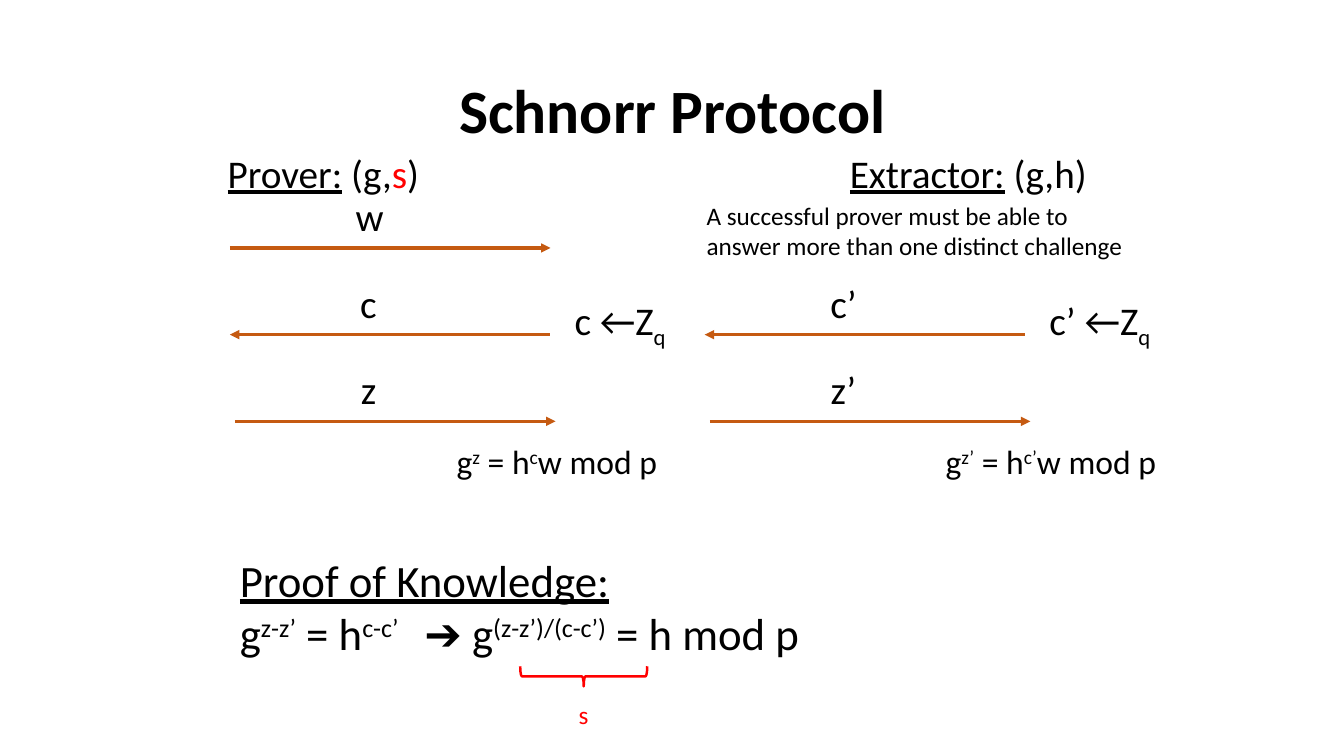
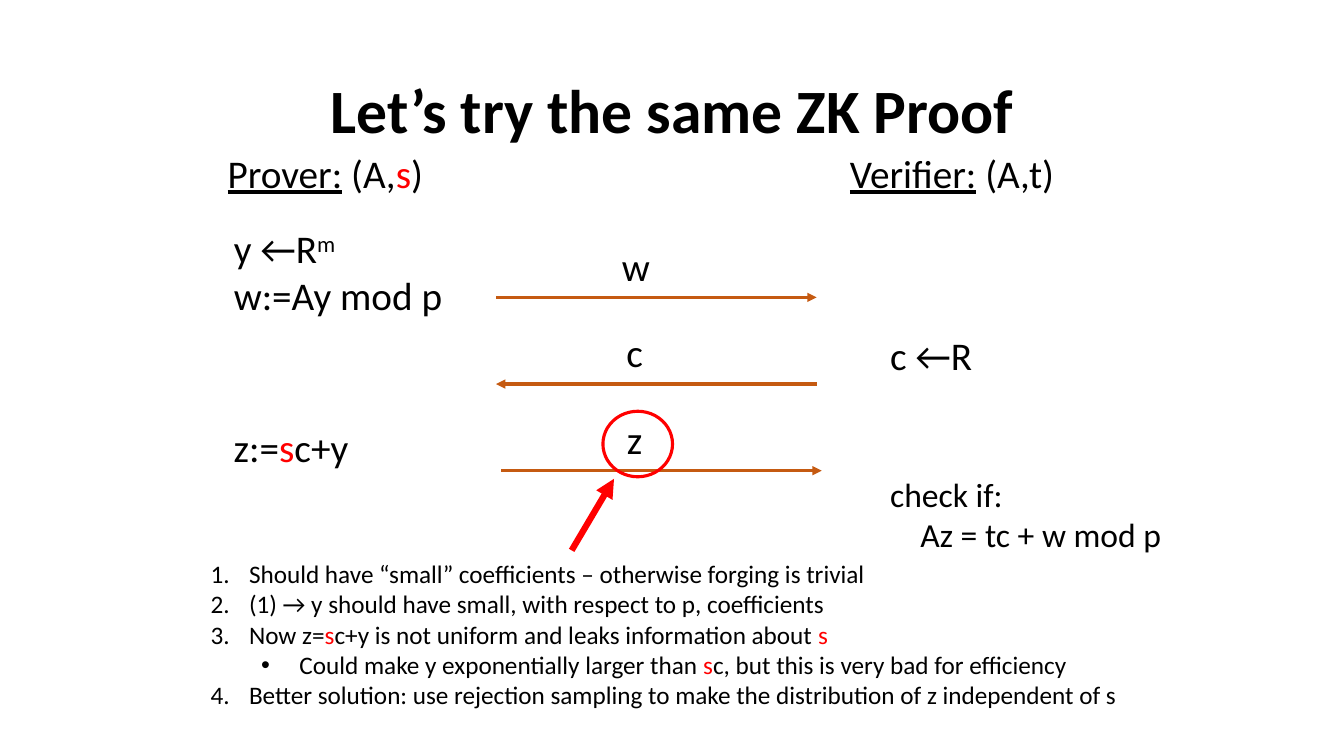
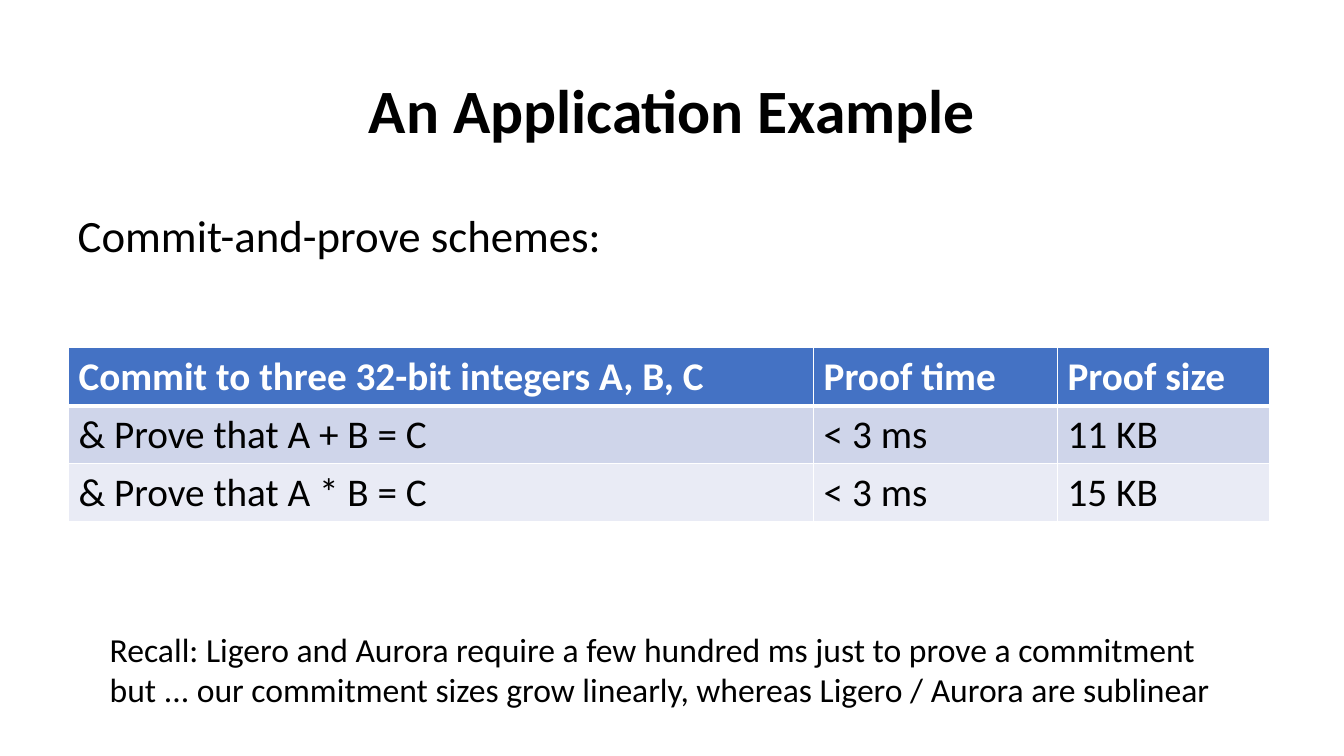
from lxml.etree import SubElement
from pptx import Presentation
from pptx.dml.color import RGBColor
from pptx.enum.shapes import MSO_CONNECTOR, MSO_SHAPE
from pptx.enum.text import MSO_ANCHOR, MSO_AUTO_SIZE, PP_ALIGN
from pptx.oxml.ns import qn
from pptx.util import Pt

PX = 9144
FONT = "Calibri"
COLORS = {
    "text": "000000",
    "secret": "FF0000",
    "arrow": "C55A11",
    "white": "FFFFFF",
    "header": "4472C4",
    "band_dark": "CFD5EA",
    "band_light": "E9EBF5",
}
BASELINES = {"sup": "30000", "sub": "-25000"}
TITLE_BOX = (92, 40, 1150, 145)
TITLE_LAYOUT = 5
CONTENT_LAYOUT = 1
PARTY_TOP = 143
ROW_STEP = 86
ARROW_WIDTH = 318
LABEL_RISE = 60
LINE_HEIGHT = 57
PASSES = (
    {"shift": 0, "label": 115, "width": 49, "align": PP_ALIGN.LEFT, "end": "tailEnd"},
    {"shift": 0, "label": 70, "width": 135, "align": PP_ALIGN.CENTER, "end": "headEnd"},
    {"shift": 5, "label": 61, "width": 153, "align": PP_ALIGN.CENTER, "end": "tailEnd"},
)


def emu(*lengths):
    return [length * PX for length in lengths]


def rgb(name):
    return RGBColor.from_string(COLORS[name])


def set_attributes(target, values):
    for name, value in values.items():
        setattr(target, name, value)


def place(shape, box):
    set_attributes(shape, dict(zip(("left", "top", "width", "height"), emu(*box))))


def add_run(paragraph, text, marks, size, color="text", bold=False):
    run = paragraph.add_run()
    run.text = text
    set_attributes(run.font, {"name": FONT, "size": Pt(size), "bold": bold})
    run.font.color.rgb = rgb("secret" if "secret" in marks else color)
    if "underline" in marks:
        run.font.underline = True
    for mark in marks:
        if mark in BASELINES:
            run.font._element.set("baseline", BASELINES[mark]) if hasattr(run.font, "_element") else (
                run._r.get_or_add_rPr().set("baseline", BASELINES[mark])
            )


def write_text(frame, lines, size, paragraph_format=None, **font_format):
    for index, line in enumerate(lines):
        paragraph = frame.paragraphs[0] if index == 0 else frame.add_paragraph()
        set_attributes(paragraph, paragraph_format or {})
        for text, *marks in [(line,)] if isinstance(line, str) else line:
            add_run(paragraph, text, marks, size, **font_format)
    return frame.paragraphs


def add_text(slide, box, lines, size=28, align=PP_ALIGN.LEFT, **font_format):
    frame = slide.shapes.add_textbox(*emu(*box)).text_frame
    set_attributes(frame, {"word_wrap": True, "auto_size": MSO_AUTO_SIZE.SHAPE_TO_FIT_TEXT})
    return write_text(frame, lines, size, {"alignment": align}, **font_format)


def indent(paragraph, margin, first_line=0):
    properties = paragraph._p.get_or_add_pPr()
    properties.set("marL", str(margin * PX))
    properties.set("indent", str(first_line * PX))
    return properties


def add_titled_slide(presentation, layout, title):
    slide = presentation.slides.add_slide(presentation.slide_layouts[layout])
    place(slide.shapes.title, TITLE_BOX)
    frame = slide.shapes.title.text_frame
    set_attributes(frame, {
        "vertical_anchor": MSO_ANCHOR.MIDDLE, "word_wrap": True, "auto_size": MSO_AUTO_SIZE.NONE,
    })
    write_text(frame, [title], 44, {"alignment": PP_ALIGN.CENTER, "line_spacing": 0.9}, bold=True)
    return slide


def fill_body(slide, box, lines, size, paragraph_format):
    body = slide.placeholders[1]
    place(body, box)
    set_attributes(body.text_frame, {"word_wrap": True, "auto_size": MSO_AUTO_SIZE.NONE})
    return write_text(body.text_frame, lines, size, paragraph_format)


def add_arrow(slide, start, finish, color="arrow", width=2.25, end="tailEnd"):
    connector = slide.shapes.add_connector(MSO_CONNECTOR.STRAIGHT, *emu(*start, *finish))
    connector.line.color.rgb = rgb(color)
    connector.line.width = Pt(width)
    properties = connector._element.spPr
    SubElement(properties.find(qn("a:ln")), qn(f"a:{end}")).set("type", "triangle")
    SubElement(properties, qn("a:effectLst"))


def add_outline(slide, preset, box, width):
    shape = slide.shapes.add_shape(preset, *emu(*box))
    shape.shadow.inherit = False
    shape.fill.background()
    shape.line.color.rgb = rgb("secret")
    shape.line.width = Pt(width)
    return shape


def add_party(slide, left, width, role, *keys):
    add_text(slide, (left, PARTY_TOP, width, LINE_HEIGHT), [[(role, "underline"), *keys]])


def add_exchange(slide, left, top, messages):
    for row, (message, step) in enumerate(zip(messages, PASSES)):
        if not message:
            continue
        y = top + row * ROW_STEP
        start = left + step["shift"]
        add_arrow(slide, (start, y), (start + ARROW_WIDTH, y), end=step["end"])
        label_box = (left + step["label"], y - LABEL_RISE, step["width"], LINE_HEIGHT)
        add_text(slide, label_box, [message], align=step["align"])


def add_transcript(slide, left, top, commitment, prime, check_left, check_width):
    challenge, response = f"c{prime}", f"z{prime}"
    add_exchange(slide, left, top, (commitment, challenge, response))
    add_text(slide, (left + 332, top + 43, 135, LINE_HEIGHT), [[(f"{challenge} ←Z",), ("q", "sub")]])
    equation = [("g",), (response, "sup"), (" = h",), (challenge, "sup"), ("w mod p",)]
    add_text(slide, (left + check_left, top + 187, check_width, 50), [equation], 24)


def add_knowledge_proof(slide, left, top):
    equation = [
        ("g",), ("z-z’", "sup"), (" = h",), ("c-c’", "sup"), ("\t➔ g",),
        ("(z-z’)/(c-c’)", "sup"), (" = h mod p",),
    ]
    lines = [[("Proof of Knowledge:", "underline")], equation]
    paragraphs = add_text(slide, (left, top, 835, 118), lines, 32)
    tabs = SubElement(paragraphs[1]._p.get_or_add_pPr(), qn("a:tabLst"))
    tab = SubElement(tabs, qn("a:tab"))
    tab.set("pos", str(183 * PX))
    tab.set("algn", "l")
    brace = add_outline(slide, MSO_SHAPE.LEFT_BRACE, (left + 341, top + 65, 20, 126), 1.75)
    brace.rotation = 270
    add_text(slide, (left + 336, top + 146, 39, 40), ["s"], 18, color="secret")


def add_remarks(slide, box):
    remarks = [
        "Should have “small” coefficients – otherwise forging is trivial",
        "(1) → y should have small, with respect to p, coefficients",
        [("Now z=",), ("s", "secret"), ("c+y is not uniform and leaks information about ",), ("s", "secret")],
        [("Could make y exponentially larger than ",), ("s", "secret"),
         ("c, but this is very bad for efficiency",)],
        "Better solution: use rejection sampling to make the distribution of z independent of s",
    ]
    spacing = {"space_before": Pt(0), "line_spacing": 1.0}
    for index, paragraph in enumerate(fill_body(slide, box, remarks, 18, spacing)):
        if index == 3:
            paragraph.level = 1
            properties = indent(paragraph, 88, -38)
            SubElement(properties, qn("a:buFont")).set("typeface", "Arial")
            SubElement(properties, qn("a:buChar")).set("char", "•")
        else:
            properties = indent(paragraph, 38, -38)
            SubElement(properties, qn("a:buFont")).set("typeface", "+mj-lt")
            SubElement(properties, qn("a:buAutoNum")).set("type", "arabicPeriod")


def format_cell(cell, text, fill, edges, **font_format):
    properties = cell._tc.get_or_add_tcPr()
    for side, width in edges.items():
        line = SubElement(properties, qn(f"a:ln{side}"))
        line.set("w", str(Pt(width)))
        color = SubElement(SubElement(line, qn("a:solidFill")), qn("a:srgbClr"))
        color.set("val", COLORS["white"])
    cell.fill.solid()
    cell.fill.fore_color.rgb = rgb(fill)
    write_text(cell.text_frame, [text], 28, **font_format)


def add_cost_table(slide, left, top):
    rows = (
        ("Commit to three 32-bit integers A, B, C", "Proof time", "Proof size"),
        ("& Prove that A + B = C", "< 3 ms", "11 KB"),
        ("& Prove that A * B = C", "< 3 ms", "15 KB"),
    )
    widths = (739, 242, 210)
    box = emu(left, top, sum(widths), LINE_HEIGHT * len(rows))
    table = slide.shapes.add_table(len(rows), len(widths), *box).table
    for column, width in zip(table.columns, widths):
        column.width = width * PX
    fills = ("header", "band_dark", "band_light")
    for row, (texts, fill) in enumerate(zip(rows, fills)):
        edges = {"L": 1, "R": 1, "T": 3 if row == 1 else 1, "B": 3 if row == 0 else 1}
        color = "white" if row == 0 else "text"
        for column, text in enumerate(texts):
            format_cell(table.cell(row, column), text, fill, edges, color=color, bold=row == 0)


def build_extractor_slide(presentation):
    slide = add_titled_slide(presentation, TITLE_LAYOUT, "Schnorr Protocol")
    add_party(slide, 216, 245, "Prover:", (" (g,",), ("s", "secret"), (")",))
    add_party(slide, 833, 265, "Extractor:", (" (g,h)",))
    add_transcript(slide, 228, 246, "w", "", 215, 252)
    add_transcript(slide, 699, 246, None, "’", 229, 292)
    insight = "A successful prover must be able to answer more than one distinct challenge"
    add_text(slide, (691, 194, 437, 71), [insight], 18)
    add_knowledge_proof(slide, 228, 543)


def build_lattice_slide(presentation):
    slide = add_titled_slide(presentation, CONTENT_LAYOUT, "Let’s try the same ZK Proof")
    add_party(slide, 216, 245, "Prover:", (" (A,",), ("s", "secret"), (")",))
    add_party(slide, 833, 245, "Verifier:", (" (A,t)",))
    add_text(slide, (222, 218, 239, 104), [[("y ←R",), ("m", "sup")], "w:=Ay mod p"])
    add_text(slide, (222, 415, 153, LINE_HEIGHT), [[("z:=",), ("s", "secret"), ("c+y",)]])
    add_text(slide, (873, 324, 134, LINE_HEIGHT), ["c ←R"])
    check = add_text(slide, (873, 465, 301, 91), ["check if:", "Az = tc + w mod p"], 24)
    indent(check[1], 30)
    add_exchange(slide, 492, 295, ("w", "c", "z"))
    add_outline(slide, MSO_SHAPE.OVAL, (598, 408, 69, 65), 2.25)
    add_arrow(slide, (567, 546), (609, 475), "secret", 4.5)
    add_remarks(slide, (199, 549, 1107, 162))


def build_application_slide(presentation):
    slide = add_titled_slide(presentation, CONTENT_LAYOUT, "An Application Example")
    spacing = {"line_spacing": 0.9, "space_before": Pt(10)}
    heading = fill_body(slide, (67, 207, 631, 89), ["Commit-and-prove schemes:"], 32, spacing)
    SubElement(indent(heading[0], 0), qn("a:buNone"))
    add_cost_table(slide, 68, 345)
    add_text(slide, (99, 619, 1167, 91), [
        "Recall: Ligero and Aurora require a few hundred ms just to prove a commitment",
        "but ... our commitment sizes grow linearly, whereas Ligero / Aurora are sublinear",
    ], 24)


def main():
    presentation = Presentation()
    set_attributes(presentation, {"slide_width": 1333 * PX, "slide_height": 750 * PX})
    build_extractor_slide(presentation)
    build_lattice_slide(presentation)
    build_application_slide(presentation)
    presentation.save("out.pptx")


if __name__ == "__main__":
    main()
